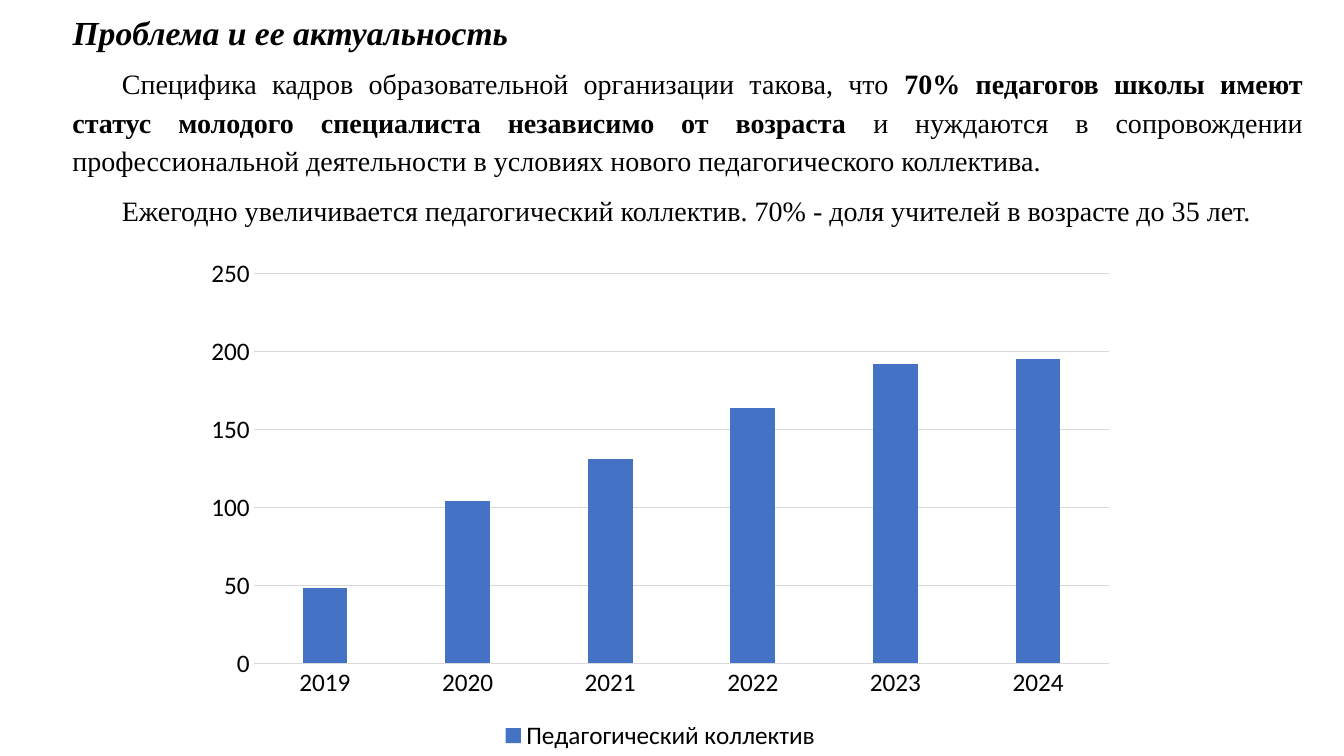
from pptx import Presentation
from pptx.chart.data import CategoryChartData
from pptx.dml.color import RGBColor
from pptx.enum.chart import (XL_CHART_TYPE as ChartType, XL_LEGEND_POSITION as LegendPosition,
                             XL_TICK_MARK as TickMark)
from pptx.enum.text import MSO_ANCHOR as Anchor, MSO_AUTO_SIZE as AutoSize, PP_ALIGN as Align
from pptx.util import Inches, Pt


def color(hex_value):
    return RGBColor.from_string(hex_value)


class SlideBuilder:
    TEXT_FONT, CHART_FONT = "Times New Roman", "Calibri"
    INK, GRID, BAR = "000000", "D9D9D9", "4472C4"
    TITLE_SIZE, BODY_SIZE, CHART_SIZE = 24, 20, 18

    def __init__(self, deck):
        self.page = deck.slides.add_slide(deck.slide_layouts[5])

    def style_font(self, font, name, size, bold=False, italic=False):
        font.name, font.size = name, Pt(size)
        font.bold, font.italic = bold, italic
        font.color.rgb = color(self.INK)

    def style_paragraph(self, para, indent=0):
        para.alignment = Align.JUSTIFY
        para.line_spacing = 1.15
        para.space_before, para.space_after = Pt(0), Pt(8)
        properties = para._p.get_or_add_pPr()
        properties.set("marL", "0")
        properties.set("indent", str(Inches(indent)))

    def title(self, text, left, top, width, height):
        box = self.page.shapes.title
        box.left, box.top, box.width, box.height = map(Inches, (left, top, width, height))
        frame = box.text_frame
        frame.text = text
        frame.word_wrap = True
        frame.auto_size = AutoSize.NONE
        frame.vertical_anchor = Anchor.TOP
        para = frame.paragraphs[0]
        self.style_paragraph(para)
        self.style_font(para.runs[0].font, self.TEXT_FONT, self.TITLE_SIZE, True, True)

    def body(self, paragraphs, left, top, width, height):
        """Each paragraph is a list of (text, bold) spans."""
        box = self.page.shapes.add_textbox(*map(Inches, (left, top, width, height)))
        frame = box.text_frame
        frame.word_wrap = True
        frame.auto_size = AutoSize.SHAPE_TO_FIT_TEXT
        for number, spans in enumerate(paragraphs):
            para = frame.add_paragraph() if number else frame.paragraphs[0]
            self.style_paragraph(para, indent=0.49)
            for text, bold in spans:
                span = para.add_run()
                span.text = text
                self.style_font(span.font, self.TEXT_FONT, self.BODY_SIZE, bold)

    def column_chart(self, name, values, left, top, width, height):
        data = CategoryChartData()
        data.categories = list(values)
        data.add_series(name, list(values.values()))
        chart = self.page.shapes.add_chart(
            ChartType.COLUMN_CLUSTERED, *map(Inches, (left, top, width, height)), data).chart
        chart.has_title = False
        self.style_font(chart.font, self.CHART_FONT, self.CHART_SIZE)

        # Columns
        plot = chart.plots[0]
        plot.gap_width, plot.overlap = 219, -27
        plot.vary_by_categories = False
        fill = plot.series[0].format.fill
        fill.solid()
        fill.fore_color.rgb = color(self.BAR)

        # Axes and gridlines
        category_axis, value_axis = chart.category_axis, chart.value_axis
        for axis in (category_axis, value_axis):
            axis.major_tick_mark = axis.minor_tick_mark = TickMark.NONE
            self.style_font(axis.tick_labels.font, self.CHART_FONT, self.CHART_SIZE)
        value_axis.minimum_scale, value_axis.maximum_scale = 0, 250
        value_axis.major_unit = 50
        value_axis.format.line.fill.background()
        value_axis.has_major_gridlines = True
        for line in (category_axis.format.line, value_axis.major_gridlines.format.line):
            line.color.rgb = color(self.GRID)
            line.width = Pt(0.75)

        # Legend
        chart.has_legend = True
        chart.legend.position = LegendPosition.BOTTOM
        chart.legend.include_in_layout = False
        self.style_font(chart.legend.font, self.CHART_FONT, self.CHART_SIZE)


def main():
    deck = Presentation()
    deck.slide_width, deck.slide_height = Inches(13.33), Inches(7.5)
    slide = SlideBuilder(deck)

    # Staff growth by year
    staff = {"2019": 48, "2020": 104, "2021": 131, "2022": 164, "2023": 192, "2024": 195}
    slide.column_chart("Педагогический коллектив", staff, 1.91, 2.46, 9.28, 5.04)

    # Heading and explanation
    slide.title("Проблема и ее актуальность", 0.62, 0.01, 12.4, 0.55)
    slide.body([
        [("Специфика кадров образовательной организации такова, что ", False),
         ("70% педагогов школы имеют статус молодого специалиста независимо от возраста", True),
         (" и нуждаются в сопровождении профессиональной деятельности "
          "в условиях нового педагогического коллектива.", False)],
        [("Ежегодно увеличивается педагогический коллектив. "
          "70% - доля учителей в возрасте до 35 лет.", False)],
    ], 0.62, 0.56, 12.4, 1.76)

    deck.save("out.pptx")


if __name__ == "__main__":
    main()
